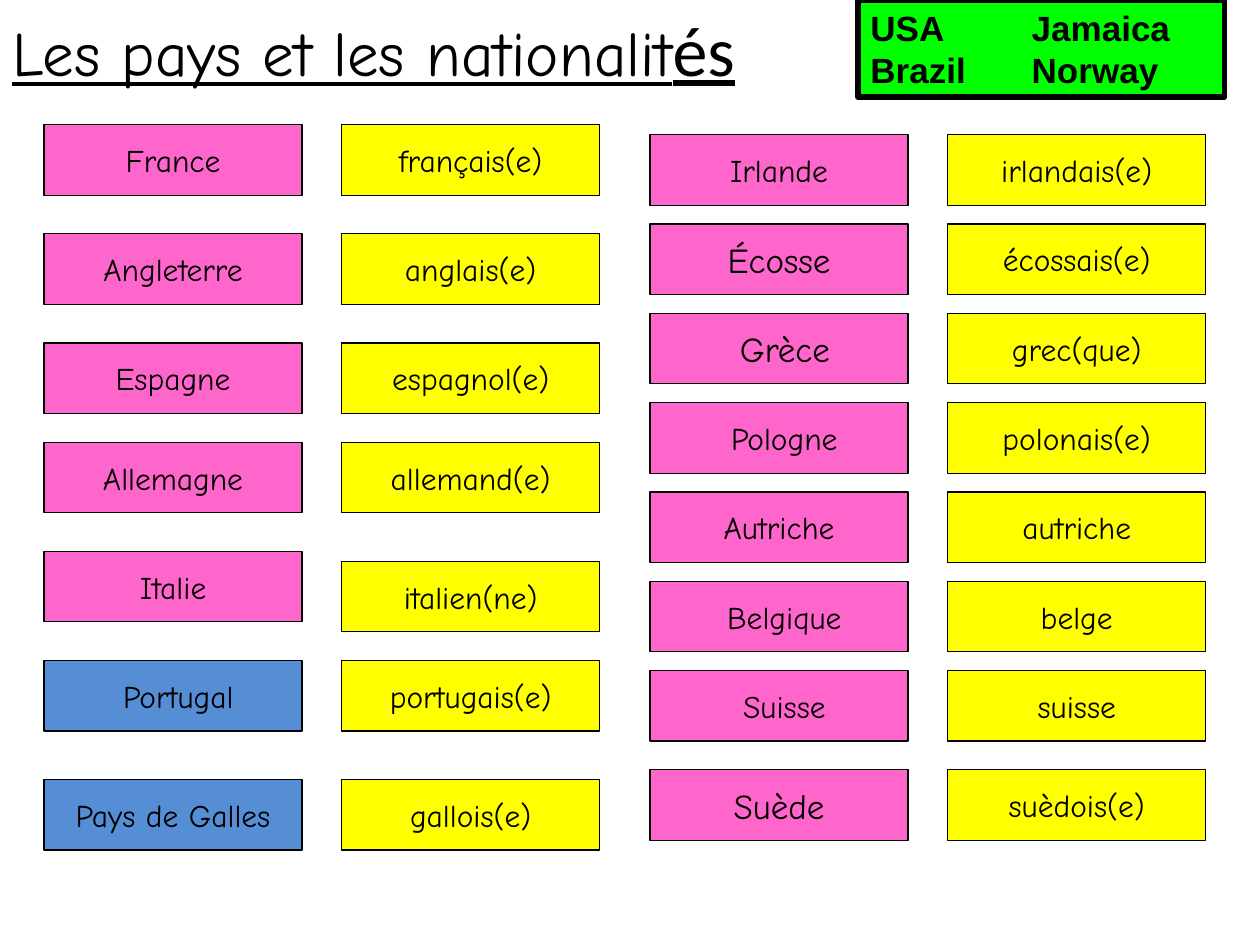
import itertools

import pptx
import pptx.dml.color
import pptx.enum.shapes
import pptx.enum.text
import pptx.oxml
import pptx.oxml.ns
import pptx.util

PINK = pptx.dml.color.RGBColor(0xFF, 0x66, 0xCC)
BLUE = pptx.dml.color.RGBColor(0x55, 0x8E, 0xD5)
YELLOW = pptx.dml.color.RGBColor(0xFF, 0xFF, 0x00)
GREEN = pptx.dml.color.RGBColor(0x00, 0xFF, 0x00)
BLACK = pptx.dml.color.RGBColor(0, 0, 0)
FONT = "Comic Neue"

TITLE = [("Les pays et les nationalit", FONT, 36), ("és", "Calibri", 40)]
EXTRA_COUNTRIES = [("USA", "Jamaica"), ("Brazil", "Norway")]

# Rows: country, its fill, its text size, nationality.
# Steps: grid units from each row to the next.
GROUPS = [
    {
        "left": 0.35, "top": 0.99, "pitch": 30,
        "steps": [11, 11, 10, 11, 11, 12],
        "rows": [
            ("France", PINK, 18, "français(e)"),
            ("Angleterre", PINK, 18, "anglais(e)"),
            ("Espagne", PINK, 18, "espagnol(e)"),
            ("Allemagne", PINK, 18, "allemand(e)"),
            ("Italie", PINK, 18, "italien(ne)"),
            (" Portugal", BLUE, 18, "portugais(e)"),
            ("Pays de Galles", BLUE, 18, "gallois(e)"),
        ],
    },
    {
        "left": 5.16, "top": 1.07, "pitch": 30,
        "steps": [9, 9, 9, 9, 9, 9, 10],
        "rows": [
            ("Irlande", PINK, 18, "irlandais(e)"),
            ("Écosse", PINK, 20, "écossais(e)"),
            (" Grèce", PINK, 20, "grec(que)"),
            (" Pologne", PINK, 18, "polonais(e)"),
            ("Autriche", PINK, 18, "autriche"),
            (" Belgique", PINK, 18, "belge"),
            (" Suisse", PINK, 18, "suisse"),
            ("Suède", PINK, 20, "suèdois(e)"),
        ],
    },
]
LOWERED = {"italien(ne)": 1}  # grid units below its row

SLIDE_WIDTH, SLIDE_HEIGHT = 10, 7.5
UNIT = SLIDE_WIDTH / 127
CARD_WIDTH, CARD_HEIGHT = 26 * UNIT, 0.56
HEADER_HEIGHT = 0.77


def add_box(page, left, top, width, height, fill, line_width):
    box = page.shapes.add_shape(
        pptx.enum.shapes.MSO_SHAPE.RECTANGLE,
        *(pptx.util.Inches(length) for length in (left, top, width, height)))
    box.shadow.inherit = False
    box.fill.solid()
    box.fill.fore_color.rgb = fill
    box.line.color.rgb = BLACK
    box.line.width = pptx.util.Pt(line_width)
    return box


def set_font(font, name, size):
    font.name = name
    font.size = pptx.util.Pt(size)
    font.color.rgb = BLACK


def add_card(page, left, top, text, fill, size=18):
    box = add_box(page, left, top, CARD_WIDTH, CARD_HEIGHT, fill, 0.75)
    frame = box.text_frame
    frame.word_wrap = False
    frame.vertical_anchor = pptx.enum.text.MSO_ANCHOR.MIDDLE
    para = frame.paragraphs[0]
    para.text = text
    para.alignment = pptx.enum.text.PP_ALIGN.CENTER
    set_font(para.font, FONT, size)


def add_group(page, group):
    offsets = itertools.accumulate(group["steps"], initial=0)
    for offset, (country, fill, size, nationality) in zip(offsets, group["rows"]):
        top = group["top"] + offset * UNIT
        add_card(page, group["left"], top, country, fill, size)
        add_card(page, group["left"] + group["pitch"] * UNIT,
                 top + LOWERED.get(nationality, 0) * UNIT, nationality, YELLOW)


def add_title(page):
    box = page.shapes.add_textbox(
        0, 0, pptx.util.Inches(7.36), pptx.util.Inches(HEADER_HEIGHT))
    box.text_frame.word_wrap = True
    para = box.text_frame.paragraphs[0]
    for text, name, size in TITLE:
        span = para.add_run()
        span.text = text
        set_font(span.font, name, size)
        span.font.underline = True


def add_extra_countries(page):
    box = add_box(page, 6.81, 0, 2.91, HEADER_HEIGHT, GREEN, 3)
    frame = box.text_frame
    frame.word_wrap = True
    frame.vertical_anchor = pptx.enum.text.MSO_ANCHOR.TOP
    para = frame.paragraphs[0]
    para.text = "\v".join("\t".join(pair) for pair in EXTRA_COUNTRIES)
    para.alignment = pptx.enum.text.PP_ALIGN.LEFT
    set_font(para.font, "Arial", 20)
    para.font.bold = True
    stops = pptx.oxml.parse_xml(
        f'<a:tabLst {pptx.oxml.ns.nsdecls("a")}>'
        f'<a:tab pos="{pptx.util.Inches(1.28)}" algn="l"/></a:tabLst>')
    para.font._element.addprevious(stops)


def main():
    deck = pptx.Presentation()
    deck.slide_width = pptx.util.Inches(SLIDE_WIDTH)
    deck.slide_height = pptx.util.Inches(SLIDE_HEIGHT)
    page = deck.slides.add_slide(deck.slide_layouts[6])
    for group in GROUPS:
        add_group(page, group)
    add_title(page)
    add_extra_countries(page)
    deck.save("out.pptx")


if __name__ == "__main__":
    main()
